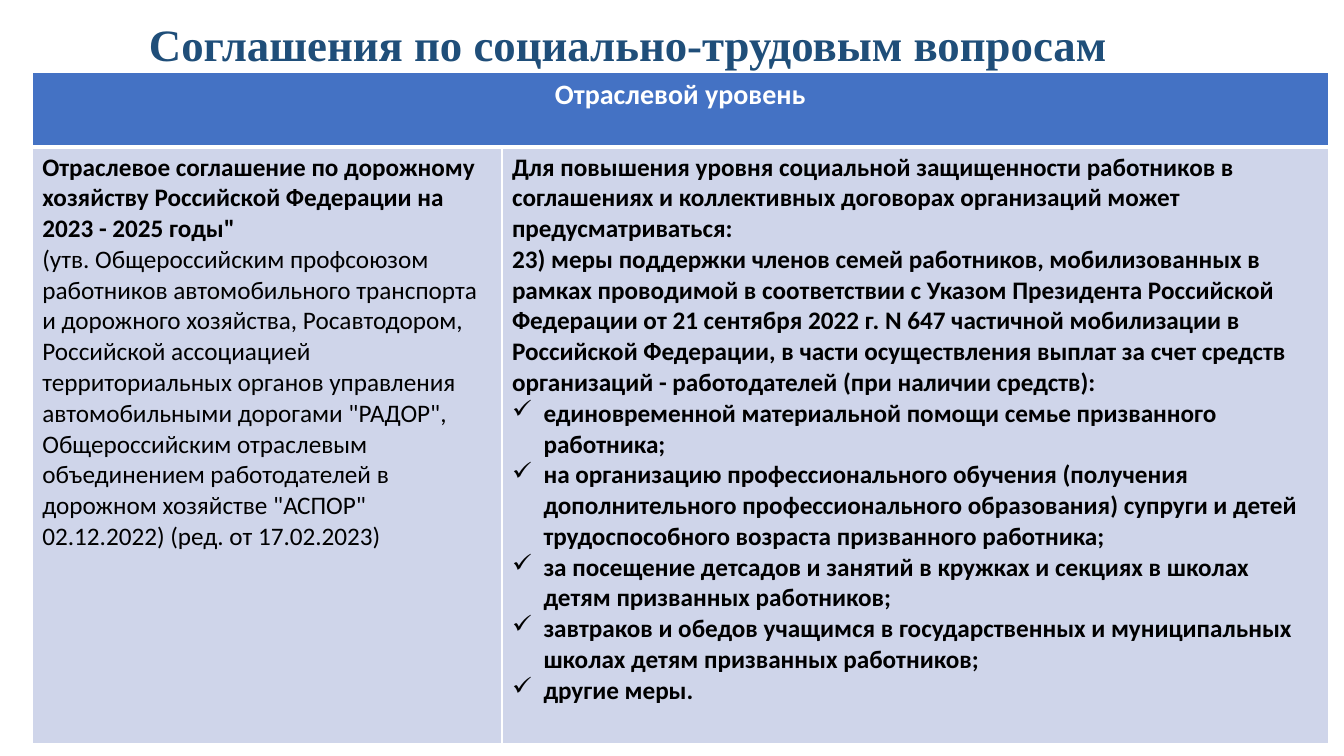
"""Builds a slide on sector-level social and labour agreements."""
from dataclasses import dataclass

from lxml.etree import SubElement
from pptx import Presentation
from pptx.dml.color import RGBColor
from pptx.enum.text import MSO_AUTO_SIZE, PP_ALIGN
from pptx.oxml import parse_xml
from pptx.oxml.ns import nsdecls, qn
from pptx.util import Pt


@dataclass(frozen=True)
class Theme:
    title_font: str = "Times New Roman"
    body_font: str = "Calibri"
    title_size: int = 32
    header_size: int = 20
    body_size: int = 18
    title: str = "1F4E79"
    header_fill: str = "4472C4"
    body_fill: str = "CFD5EA"
    white: str = "FFFFFF"
    black: str = "000000"
    thin: int = 1
    thick: int = 3
    indent: float = 22.5


THEME = Theme()

TITLE = "Соглашения по социально-трудовым вопросам"
HEADER = "Отраслевой уровень"
AGREEMENT = "Отраслевое соглашение по дорожному хозяйству Российской Федерации на 2023 - 2025 годы\""
APPROVAL = (
    "(утв. Общероссийским профсоюзом работников автомобильного транспорта и дорожного хозяйства, "
    "Росавтодором, Российской ассоциацией территориальных органов управления автомобильными дорогами "
    "\"РАДОР\", Общероссийским отраслевым объединением работодателей в дорожном хозяйстве \"АСПОР\" "
    "02.12.2022) (ред. от 17.02.2023)"
)
PROVISIONS = [
    "Для повышения уровня социальной защищенности работников в соглашениях и коллективных договорах "
    "организаций может предусматриваться:",
    "23) меры поддержки членов семей работников, мобилизованных в рамках проводимой в соответствии "
    "с Указом Президента Российской Федерации от 21 сентября 2022 г. N 647 частичной мобилизации "
    "в Российской Федерации, в части осуществления выплат за счет средств организаций - работодателей "
    "(при наличии средств):",
]
MEASURES = [
    "единовременной материальной помощи семье призванного работника;",
    "на организацию профессионального обучения (получения дополнительного профессионального "
    "образования) супруги и детей трудоспособного возраста призванного работника;",
    "за посещение детсадов и занятий в кружках и секциях в школах детям призванных работников;",
    "завтраков и обедов учащимся в государственных и муниципальных школах детям призванных работников;",
    "другие меры.",
]


def add_run(paragraph, text, font, size, color, bold=True):
    """Add one formatted run to a paragraph."""
    run = paragraph.add_run()
    run.text = text
    run.font.name = font
    run.font.size = Pt(size)
    run.font.bold = bold
    run.font.color.rgb = RGBColor.from_string(color)


def add_check_mark(paragraph):
    """Give a paragraph a check-mark bullet with a hanging indent."""
    properties = paragraph._p.get_or_add_pPr()
    properties.set("marL", str(Pt(THEME.indent)))
    properties.set("indent", str(-Pt(THEME.indent)))
    SubElement(properties, qn("a:buChar")).set("char", "✓")


def style_cell(cell, fill, top, bottom):
    """Fill a cell and draw its white borders."""
    cell.fill.solid()
    cell.fill.fore_color.rgb = RGBColor.from_string(fill)
    widths = {"L": THEME.thin, "R": THEME.thin, "T": top, "B": bottom}
    for index, (side, width) in enumerate(widths.items()):
        border = parse_xml(
            f'<a:ln{side} {nsdecls("a")} w="{Pt(width)}"><a:solidFill>'
            f'<a:srgbClr val="{THEME.white}"/></a:solidFill></a:ln{side}>'
        )
        cell._tc.get_or_add_tcPr().insert(index, border)


def fill_body_cell(cell, entries):
    """Write (text, bold, bulleted) entries as paragraphs of a body cell."""
    frame = cell.text_frame
    for index, (text, bold, bulleted) in enumerate(entries):
        paragraph = frame.add_paragraph() if index else frame.paragraphs[0]
        if bulleted:
            add_check_mark(paragraph)
        add_run(paragraph, text, THEME.body_font, THEME.body_size, THEME.black, bold)


def add_title(slide):
    """Add the slide heading."""
    box = slide.shapes.add_textbox(Pt(99.36), Pt(8.64), Pt(803.52), Pt(46.08))
    frame = box.text_frame
    frame.word_wrap = True
    frame.auto_size = MSO_AUTO_SIZE.SHAPE_TO_FIT_TEXT
    add_run(frame.paragraphs[0], TITLE, THEME.title_font, THEME.title_size, THEME.title)


def add_agreement_table(slide):
    """Add the table with the agreement and its provisions."""
    widths, heights = (335.5, 590.4), (53.28, 426.24)
    table = slide.shapes.add_table(
        2, 2, Pt(23.04), Pt(51.84), Pt(sum(widths)), Pt(sum(heights))
    ).table
    for column, width in zip(table.columns, widths):
        column.width = Pt(width)
    for row, height in zip(table.rows, heights):
        row.height = Pt(height)
    for cell in table.rows[0].cells:
        style_cell(cell, THEME.header_fill, THEME.thin, THEME.thick)
    for cell in table.rows[1].cells:
        style_cell(cell, THEME.body_fill, THEME.thick, THEME.thin)

    header = table.cell(0, 0)
    header.merge(table.cell(0, 1))
    paragraph = header.text_frame.paragraphs[0]
    paragraph.alignment = PP_ALIGN.CENTER
    add_run(paragraph, HEADER, THEME.body_font, THEME.header_size, THEME.white)

    fill_body_cell(table.cell(1, 0), [(AGREEMENT, True, False), (APPROVAL, False, False)])
    provisions = [(text, True, False) for text in PROVISIONS]
    measures = [(text, True, True) for text in MEASURES]
    fill_body_cell(table.cell(1, 1), provisions + measures)


def main():
    """Build and save the slide."""
    presentation = Presentation()
    presentation.slide_width, presentation.slide_height = Pt(960), Pt(540)
    slide = presentation.slides.add_slide(presentation.slide_layouts[6])
    add_agreement_table(slide)
    add_title(slide)
    presentation.save("out.pptx")


if __name__ == "__main__":
    main()
